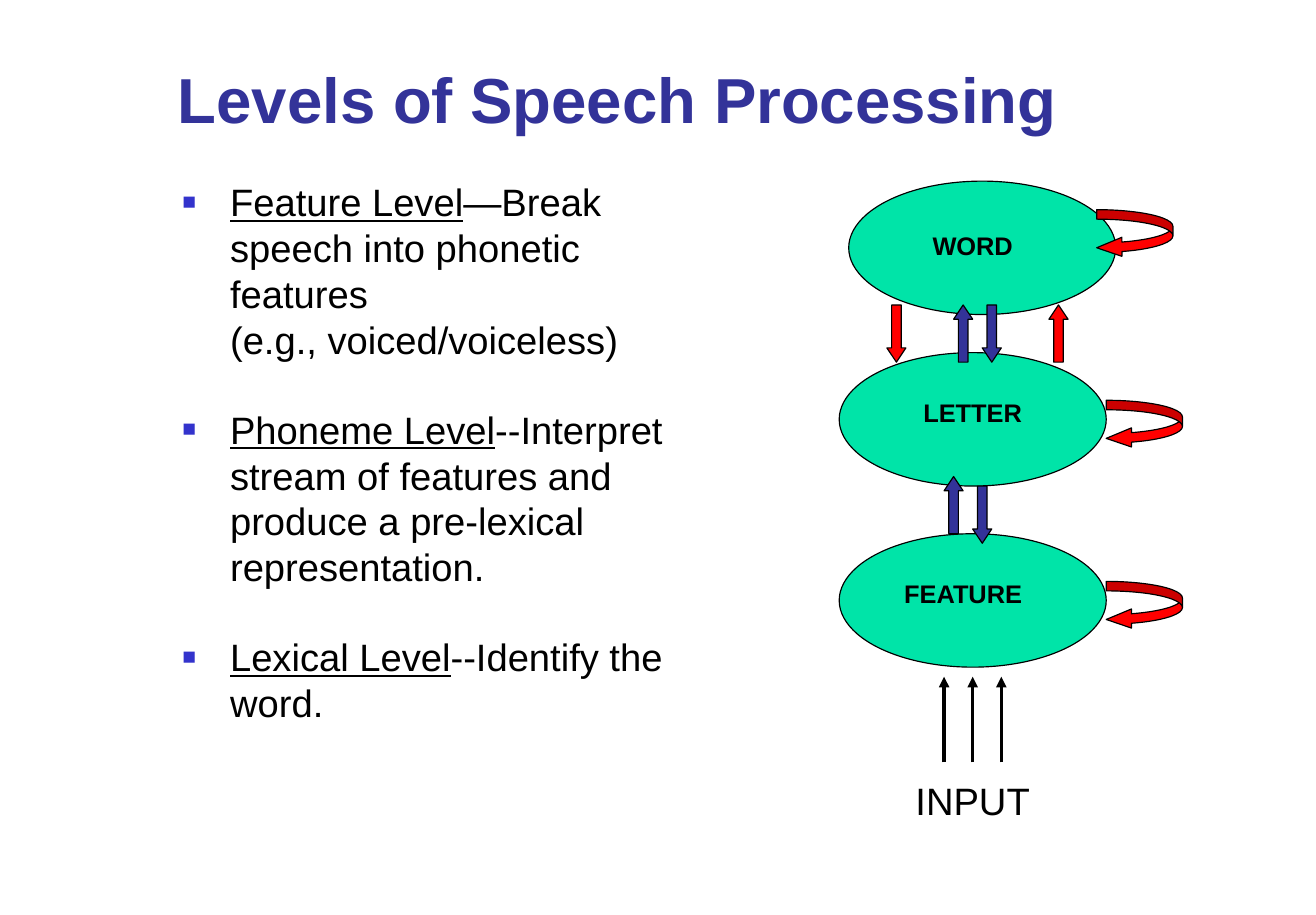
from dataclasses import dataclass

from lxml import etree
from pptx import Presentation
from pptx import util as u
from pptx.dml.color import RGBColor
from pptx.enum import shapes, text
from pptx.oxml.ns import qn

PX = 9525
SHAPE = shapes.MSO_SHAPE


@dataclass(frozen=True)
class Theme:
    font: str = "Arial"
    ink: str = "000000"
    navy: str = "333399"
    blue: str = "3333CC"
    green: str = "00E4A8"
    red: str = "FF0000"
    head: int = 40
    body: int = 24
    label: int = 16
    gap: int = 28
    thin: float = 0.75
    thick: float = 2.25


class Board:
    def __init__(self, deck, theme):
        self.theme = theme
        self.slide = deck.slides.add_slide(deck.slide_layouts[5])
        self.items = self.slide.shapes

    def style(self, runs, size, color, bold=False):
        for run in runs:
            run.font.name = self.theme.font
            run.font.size = u.Pt(size)
            run.font.bold = bold
            run.font.color.rgb = RGBColor.from_string(color)

    def frame(self, item, anchor):
        frame = item.text_frame
        frame.word_wrap = True
        frame.auto_size = text.MSO_AUTO_SIZE.NONE
        frame.vertical_anchor = anchor
        frame.margin_left = frame.margin_right = 10 * PX
        frame.margin_top = frame.margin_bottom = 6 * PX
        return frame

    def title(self, words, x, y, w, h):
        item = self.items.title
        item.left, item.top, item.width, item.height = (n * PX for n in (x, y, w, h))
        frame = self.frame(item, text.MSO_ANCHOR.BOTTOM)
        frame.text = words
        para = frame.paragraphs[0]
        para.alignment = text.PP_ALIGN.LEFT
        self.style(para.runs, self.theme.head, self.theme.navy, True)

    def bullet(self, para):
        props = para._p.get_or_add_pPr()
        props.set("marL", str(40 * PX))
        props.set("indent", str(-40 * PX))
        color = etree.SubElement(props, qn("a:buClr"))
        etree.SubElement(color, qn("a:srgbClr"), val=self.theme.blue)
        etree.SubElement(props, qn("a:buSzPct"), val="60000")
        etree.SubElement(props, qn("a:buFont"), typeface=self.theme.font)
        etree.SubElement(props, qn("a:buChar"), char="■")

    def points(self, rows, x, y, w, h):
        item = self.items.add_textbox(x * PX, y * PX, w * PX, h * PX)
        frame = self.frame(item, text.MSO_ANCHOR.TOP)
        for i, (term, *lines) in enumerate(rows):
            para = frame.add_paragraph() if i else frame.paragraphs[0]
            para.text = term
            for j, line in enumerate(lines):
                if j:
                    para.add_line_break()
                para.add_run().text = line
            self.style(para.runs, self.theme.body, self.theme.ink)
            para.runs[0].font.underline = True
            para.space_after = u.Pt(self.theme.gap if i < len(rows) - 1 else 0)
            self.bullet(para)

    def label(self, words, mid, y, w, h, size, bold=False):
        item = self.items.add_textbox((mid - w // 2) * PX, y * PX, w * PX, h * PX)
        frame = self.frame(item, text.MSO_ANCHOR.MIDDLE)
        frame.text = words
        para = frame.paragraphs[0]
        para.alignment = text.PP_ALIGN.CENTER
        self.style(para.runs, size, self.theme.ink, bold)

    def shape(self, kind, x, y, w, h, color, adjust=(), turn=0):
        item = self.items.add_shape(kind, x * PX, y * PX, w * PX, h * PX)
        item.shadow.inherit = False
        item.fill.solid()
        item.fill.fore_color.rgb = RGBColor.from_string(color)
        item.line.color.rgb = RGBColor.from_string(self.theme.ink)
        item.line.width = u.Pt(self.theme.thin)
        item.rotation = turn
        for i, value in enumerate(adjust):
            item.adjustments[i] = value

    def level(self, words, x, y, mid, top):
        self.shape(SHAPE.OVAL, x, y, 224, 112, self.theme.green)
        self.label(words, mid, top, 160, 36, self.theme.label, True)

    def loop(self, x, y):
        self.shape(SHAPE.CURVED_LEFT_ARROW, x, y, 64, 40, self.theme.red, (0.2, 0.4, 0.53))

    def arrow(self, x, y, color, turn=0):
        self.shape(SHAPE.UP_ARROW, x, y, 16, 48, color, (0.5, 0.75), turn)

    def line(self, x, start, end):
        item = self.items.add_connector(
            shapes.MSO_CONNECTOR.STRAIGHT, x * PX, start * PX, x * PX, end * PX)
        item.line.color.rgb = RGBColor.from_string(self.theme.ink)
        item.line.width = u.Pt(self.theme.thick)
        etree.SubElement(item.line._get_or_add_ln(), qn("a:tailEnd"), type="triangle")
        etree.SubElement(item._element.spPr, qn("a:effectLst"))


def main():
    deck = Presentation()
    deck.slide_width, deck.slide_height = 1104 * PX, 768 * PX
    theme = Theme()
    board = Board(deck, theme)

    board.title("Levels of Speech Processing", 139, 40, 941, 80)
    board.points([
        ("Feature Level", "—Break speech into phonetic features", "(e.g., voiced/voiceless)"),
        ("Phoneme Level", "--Interpret stream of features and produce a pre-lexical representation."),
        ("Lexical Level", "--Identify the word."),
    ], 143, 144, 461, 542)

    for words, x, y, mid, top in [
        ("WORD", 712, 152, 816, 188),
        ("FEATURE", 704, 448, 808, 480),
        ("LETTER", 704, 296, 816, 328),
    ]:
        board.level(words, x, y, mid, top)

    board.label("INPUT", 816, 648, 288, 48, theme.body)
    for x in range(792, 841, 24):
        board.line(x, 640, 568)

    for x, y in [(920, 176), (928, 336), (928, 488)]:
        board.loop(x, y)

    for x, y, color, turn in [
        (792, 400, theme.navy, 0),
        (800, 256, theme.navy, 0),
        (824, 256, theme.navy, 180),
        (816, 408, theme.navy, 180),
        (880, 256, theme.red, 0),
        (744, 256, theme.red, 180),
    ]:
        board.arrow(x, y, color, turn)

    deck.save("out.pptx")


if __name__ == "__main__":
    main()
